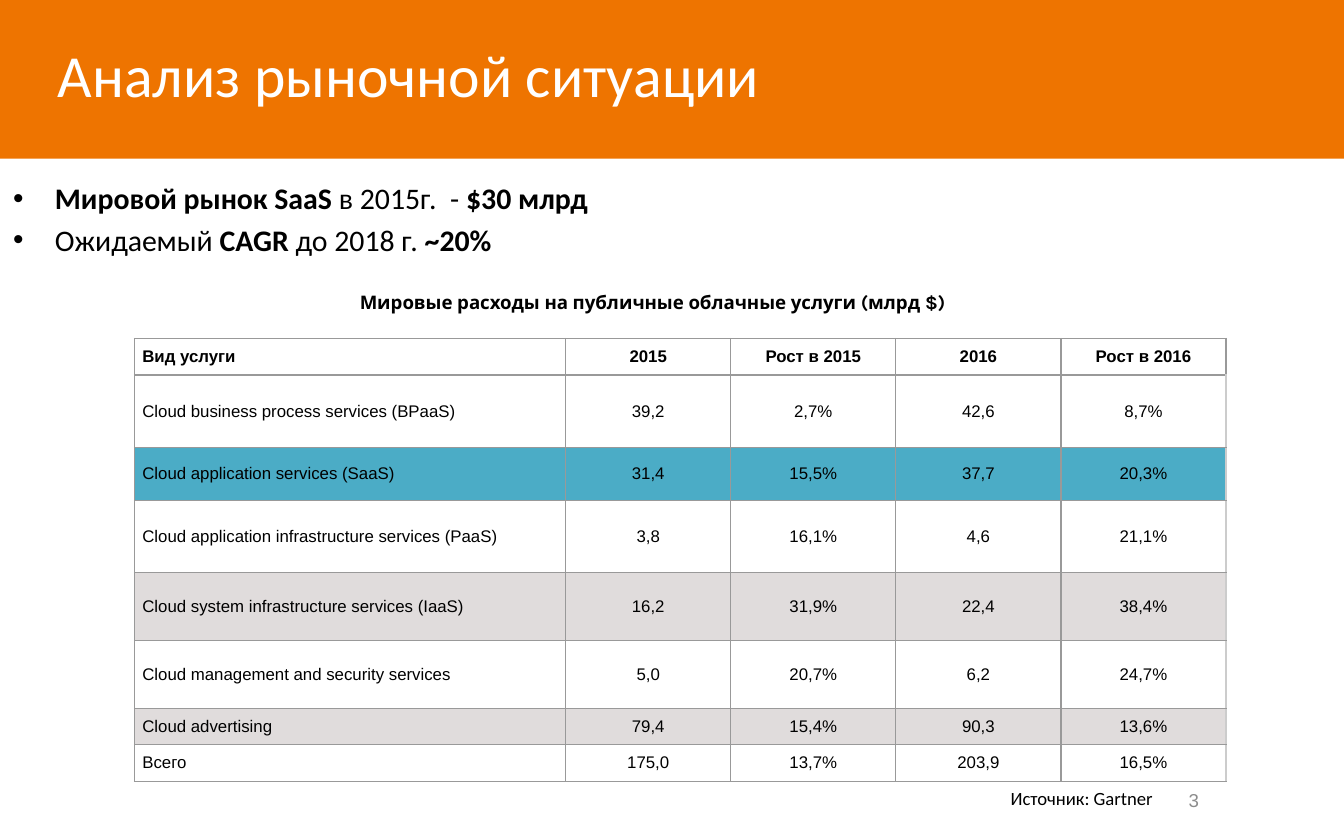
from lxml.etree import SubElement
from pptx import Presentation
from pptx.dml.color import RGBColor
from pptx.enum.shapes import MSO_SHAPE
from pptx.enum.text import MSO_ANCHOR, PP_ALIGN
from pptx.oxml.ns import qn
from pptx.util import Cm, Pt

# Content
TITLE = "Анализ рыночной ситуации"
BULLETS = [  # (text, bold) runs
    [("Мировой рынок SaaS ", True), ("в 2015г.  - ", False), ("$30 млрд", True)],
    [("Ожидаемый ", False), ("CAGR ", True), ("до 2018 г. ", False), ("~20%", True)],
]
CAPTION = "Мировые расходы на публичные облачные услуги (млрд $)"
SOURCE = "Источник: Gartner"
PAGE = "3"
HEADER = ("Вид услуги", "2015", "Рост в 2015", "2016", "Рост в 2016")

WHITE = RGBColor(0xFF, 0xFF, 0xFF)
BLACK = RGBColor(0, 0, 0)
ORANGE = RGBColor(0xEE, 0x74, 0x00)
TEAL = RGBColor(0x4B, 0xAC, 0xC6)
GREY = RGBColor(0xE0, 0xDC, 0xDC)
PAGE_GREY = RGBColor(0x8C, 0x8C, 0x8C)
BORDER = RGBColor(0x99, 0x99, 0x99)
LIGHT_BORDER = RGBColor(0xCC, 0xCC, 0xCC)

ROWS = [  # height in cm, fill, values
    (0.69, WHITE, HEADER),
    (1.37, WHITE, ("Cloud business process services (BPaaS)", "39,2", "2,7%", "42,6", "8,7%")),
    (1, TEAL, ("Cloud application services (SaaS)", "31,4", "15,5%", "37,7", "20,3%")),
    (1.37, WHITE, ("Cloud application infrastructure services (PaaS)", "3,8", "16,1%", "4,6", "21,1%")),
    (1.28, GREY, ("Cloud system infrastructure services (IaaS)", "16,2", "31,9%", "22,4", "38,4%")),
    (1.28, WHITE, ("Cloud management and security services", "5,0", "20,7%", "6,2", "24,7%")),
    (0.69, GREY, ("Cloud advertising", "79,4", "15,4%", "90,3", "13,6%")),
    (0.69, WHITE, ("Всего", "175,0", "13,7%", "203,9", "16,5%")),
]
COL_WIDTHS = [8.15] + [3.12] * 4

prs = Presentation()
prs.slide_width, prs.slide_height = Cm(25.4), Cm(15.88)
s = prs.slides.add_slide(prs.slide_layouts[6])


def add_run(p, text, color=BLACK, **font):
    r = p.add_run()
    r.text = text
    r.font.color.rgb = color
    for name, value in font.items():
        setattr(r.font, name, value)


def add_box(x, y, w, h, **frame):
    tf = s.shapes.add_textbox(Cm(x), Cm(y), Cm(w), Cm(h)).text_frame
    for name, value in frame.items():
        setattr(tf, name, value)
    return tf


def add_bullet(p):
    pPr = p._p.get_or_add_pPr()
    pPr.set("marL", str(Cm(0.79)))
    pPr.set("indent", str(-Cm(0.79)))
    p.space_after = Pt(3)
    SubElement(pPr, qn("a:buFont"), typeface="Arial")
    SubElement(pPr, qn("a:buChar"), char="•")


def set_borders(cell, colors):
    tcPr = cell._tc.get_or_add_tcPr()
    for i, (side, color) in enumerate(colors.items()):
        ln = SubElement(tcPr, qn("a:ln" + side), w=str(Pt(0.75)))
        fill = SubElement(ln, qn("a:solidFill"))
        SubElement(fill, qn("a:srgbClr"), val=str(color))
        tcPr.insert(i, ln)  # borders precede the cell fill


# Title band
band = s.shapes.add_shape(MSO_SHAPE.RECTANGLE, 0, 0, prs.slide_width, Cm(3))
band.shadow.inherit = False
band.fill.solid()
band.fill.fore_color.rgb = ORANGE
band.line.fill.background()
tf = add_box(0.84, 0.97, 20.32, 0.86, word_wrap=True, vertical_anchor=MSO_ANCHOR.MIDDLE)
add_run(tf.paragraphs[0], TITLE, WHITE, size=Pt(32), name="Calibri")

# Key figures
tf = add_box(0, 3.28, 19.48, 1.73, word_wrap=True)
for i, runs in enumerate(BULLETS):
    p = tf.add_paragraph() if i else tf.paragraphs[0]
    add_bullet(p)
    for text, bold in runs:
        add_run(p, text, size=Pt(16), name="Calibri", bold=bold)

# Spending table
frame = s.shapes.add_table(len(ROWS), len(HEADER), Cm(2.54), Cm(6.4),
                           Cm(sum(COL_WIDTHS)), Cm(sum(row[0] for row in ROWS)))
table = frame.table
for column, width in zip(table.columns, COL_WIDTHS):
    column.width = Cm(width)
for i, (height, color, values) in enumerate(ROWS):
    table.rows[i].height = Cm(height)
    for j, value in enumerate(values):
        cell = table.cell(i, j)
        cell.fill.solid()
        cell.fill.fore_color.rgb = color
        cell.vertical_anchor = MSO_ANCHOR.MIDDLE
        for side in ("left", "top", "right", "bottom"):
            setattr(cell, "margin_" + side, Cm(0.15))
        light = i > 0 and j == len(HEADER) - 1
        set_borders(cell, {"L": BORDER, "R": LIGHT_BORDER if light else BORDER,
                           "T": BORDER, "B": BORDER})
        p = cell.text_frame.paragraphs[0]
        p.alignment = PP_ALIGN.CENTER if j else PP_ALIGN.LEFT
        add_run(p, value, size=Pt(9), name="Arial", bold=i == 0)

# Table caption, source and page number
tf = add_box(6.55, 5.36, 11.68, 0.69, word_wrap=False, vertical_anchor=MSO_ANCHOR.MIDDLE)
add_run(tf.paragraphs[0], CAPTION, size=Pt(10), name="Karla", bold=True)
tf = add_box(18.85, 14.76, 3.3, 1.12, word_wrap=False)
add_run(tf.paragraphs[0], SOURCE, size=Pt(10), name="Calibri")
tf = add_box(18.21, 14.71, 4.45, 0.84, word_wrap=True, vertical_anchor=MSO_ANCHOR.MIDDLE,
             margin_left=0, margin_right=0, margin_top=0, margin_bottom=0)
tf.paragraphs[0].alignment = PP_ALIGN.RIGHT
add_run(tf.paragraphs[0], PAGE, PAGE_GREY, size=Pt(10), name="Arial")

prs.save("out.pptx")
